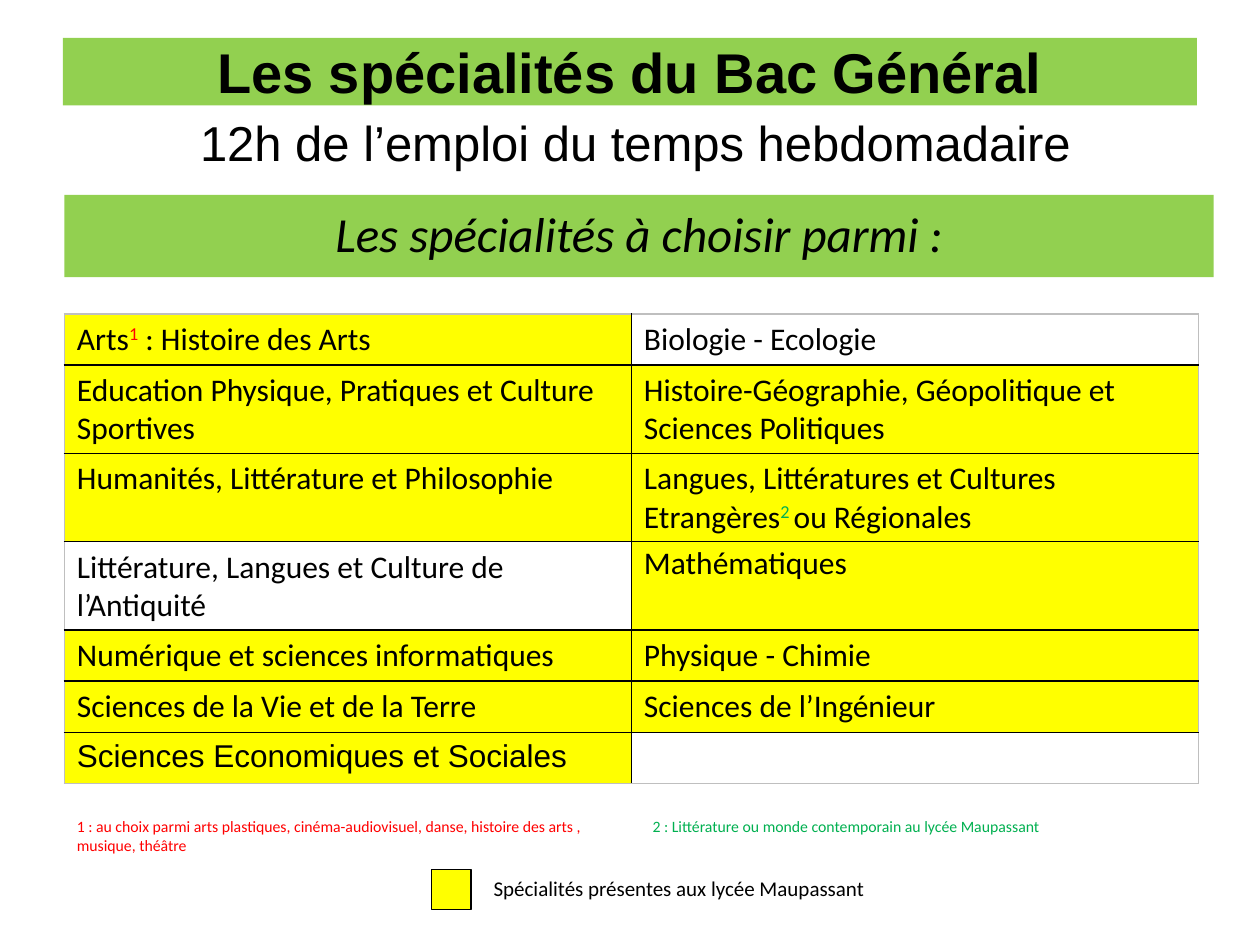
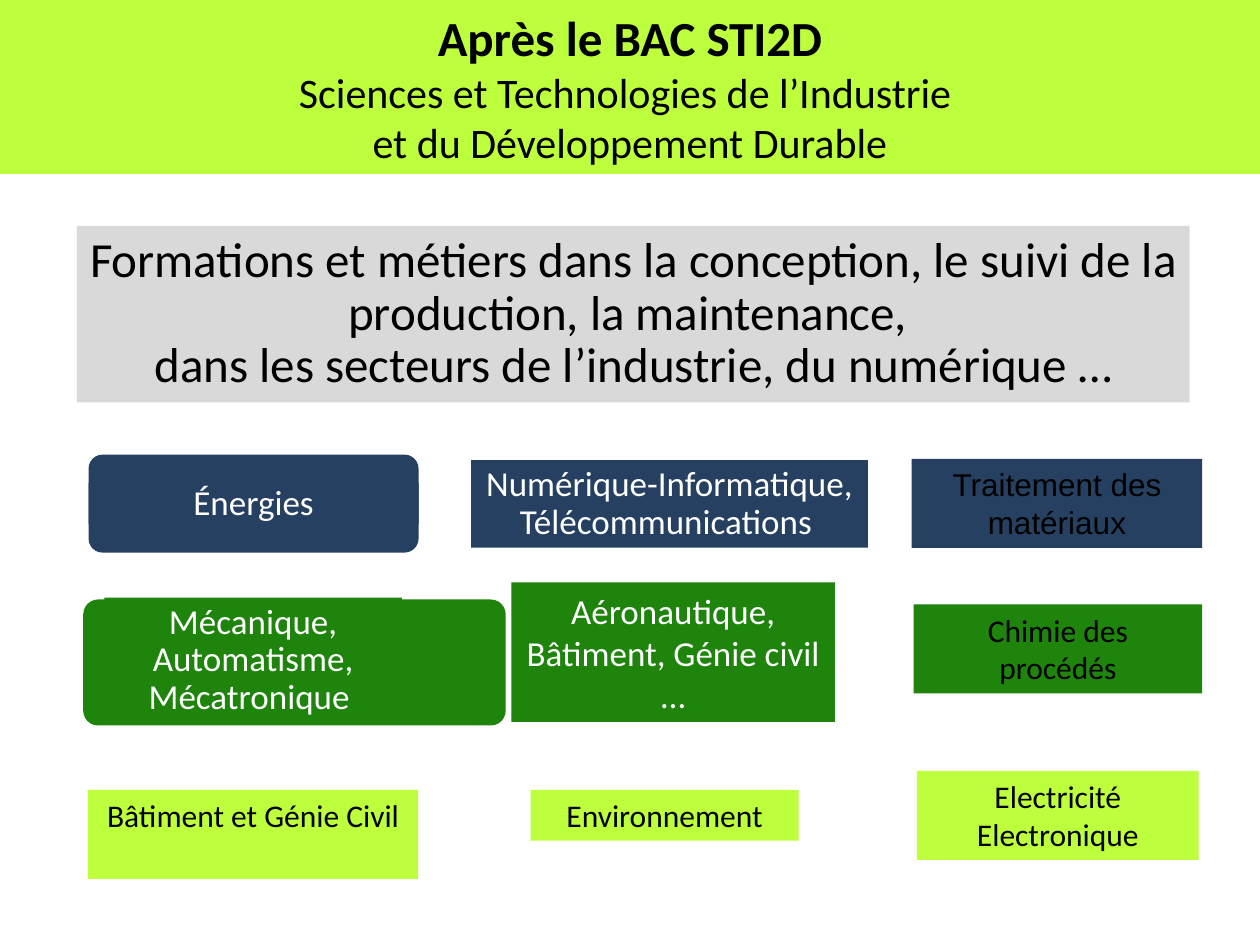
from dataclasses import dataclass

from lxml.etree import SubElement
from pptx import Presentation
from pptx.dml.color import RGBColor
from pptx.enum.shapes import MSO_SHAPE as Preset
from pptx.enum.text import MSO_ANCHOR as Anchor, PP_ALIGN as Align
from pptx.oxml.ns import qn
from pptx.util import Pt


@dataclass(frozen=True)
class Theme:
    sans: str = "Calibri"
    alternate: str = "Arial"
    black: str = "000000"
    white: str = "FFFFFF"
    red: str = "FF0000"
    note_green: str = "00B050"
    band_green: str = "92D050"
    lime: str = "BDFF3D"
    forest: str = "1E840C"
    navy: str = "254061"
    grey: str = "D9D9D9"
    edge_grey: str = "BFBFBF"
    yellow: str = "FFFF00"
    title: float = 32
    heading: float = 28
    subheading: float = 24
    field: float = 20
    body: float = 18
    legend: float = 12
    note: float = 9


T = Theme()


def rgb(code):
    return RGBColor.from_string(code)


# Text
def write_text(frame, paragraphs, *, size=T.body, font=T.sans, color=T.black,
               bold=False, italic=False, align=Align.LEFT, spacing=None,
               anchor=Anchor.TOP, inset=None, wrap=True):
    """Each paragraph is a string or a list of (text, run overrides) pairs."""
    frame.word_wrap = wrap
    frame.vertical_anchor = anchor
    if inset is not None:
        frame.margin_left = frame.margin_right = Pt(inset)
        frame.margin_top = frame.margin_bottom = Pt(inset)
    for index, content in enumerate(paragraphs):
        paragraph = frame.add_paragraph() if index else frame.paragraphs[0]
        paragraph.alignment = align
        if spacing:
            paragraph.line_spacing = spacing
        runs = [(content, {})] if isinstance(content, str) else content
        for text, change in runs:
            run = paragraph.add_run()
            run.text = text
            run.font.name = font
            run.font.size = Pt(change.get("size", size))
            run.font.bold = change.get("bold", bold)
            run.font.italic = italic
            run.font.color.rgb = rgb(change.get("color", color))
            if change.get("raised"):
                run._r.get_or_add_rPr().set("baseline", "30000")


def add_text(slide, box, paragraphs, **text_format):
    label = slide.shapes.add_textbox(*map(Pt, box))
    write_text(label.text_frame, paragraphs, **text_format)


# Filled blocks
def add_block(slide, box, fill, paragraphs=(), *, radius=0, outline=None, **text_format):
    preset = Preset.ROUNDED_RECTANGLE if radius else Preset.RECTANGLE
    block = slide.shapes.add_shape(preset, *map(Pt, box))
    block.shadow.inherit = False
    if radius:
        block.adjustments[0] = radius / min(box[2:])
    block.fill.solid()
    block.fill.fore_color.rgb = rgb(fill)
    if outline:
        block.line.color.rgb = rgb(outline)
        block.line.width = Pt(0.75)
    else:
        block.line.fill.background()
    if paragraphs:
        write_text(block.text_frame, paragraphs, **{"align": Align.CENTER, **text_format})


# Table
def set_borders(cell, colors):
    properties = cell._tc.get_or_add_tcPr()
    for position, (side, color) in enumerate(colors.items()):
        line = properties.makeelement(qn(f"a:{side}"), {"w": str(Pt(1))})
        fill = SubElement(line, qn("a:solidFill"))
        SubElement(fill, qn("a:srgbClr"), val=color)
        properties.insert(position, line)


def add_specialty_table(slide, left, top, column_width, rows):
    """Each row is (height, cells); each cell is (content, offered, format)."""
    heights = [height for height, _ in rows]
    table = slide.shapes.add_table(len(rows), 2, Pt(left), Pt(top),
                                   Pt(2 * column_width), Pt(sum(heights))).table
    table.first_row = table.horz_banding = False
    for column in table.columns:
        column.width = Pt(column_width)
    last = len(rows) - 1
    for r, (height, cells) in enumerate(rows):
        table.rows[r].height = Pt(height)
        for c, (content, offered, text_format) in enumerate(cells):
            cell = table.cell(r, c)
            if offered:
                cell.fill.solid()
                cell.fill.fore_color.rgb = rgb(T.yellow)
            else:
                cell.fill.background()
            if content:
                write_text(cell.text_frame, [content], **text_format)
            outer = {"lnL": c == 0, "lnR": c == 1, "lnT": r == 0, "lnB": r == last}
            set_borders(cell, {side: T.edge_grey if at_edge else T.black
                               for side, at_edge in outer.items()})


# Slides
def build_specialties(slide):
    add_block(slide, (36, 21.6, 648, 38.6), T.band_green, ["Les spécialités du Bac Général"],
              size=T.title, font=T.alternate, bold=True, anchor=Anchor.MIDDLE, inset=0)
    add_text(slide, (54, 60.5, 618, 41), ["12h de l’emploi du temps hebdomadaire"],
             size=T.heading, font=T.alternate, align=Align.CENTER, inset=3.6)
    add_block(slide, (36.8, 111.4, 656.8, 47), T.band_green, ["Les spécialités à choisir parmi :"],
              size=T.heading, italic=True, spacing=0.93, anchor=Anchor.MIDDLE, wrap=False)

    def offered(content, **text_format):
        return content, True, text_format

    def absent(content=""):
        return content, False, {}

    single, double = 29.3, 50.4
    arts = [("Arts", {}), ("1", {"color": T.red, "raised": True}), (" : Histoire des Arts", {})]
    languages = [("Langues, Littératures et Cultures Etrangères", {}),
                 ("2 ", {"color": T.note_green, "raised": True}), ("ou Régionales", {})]
    add_specialty_table(slide, 36.8, 179.4, 324, [
        (single, (offered(arts), absent("Biologie - Ecologie"))),
        (double, (offered("Education Physique, Pratiques et Culture Sportives"),
                  offered("Histoire-Géographie, Géopolitique et Sciences Politiques"))),
        (double, (offered("Humanités, Littérature et Philosophie"), offered(languages))),
        (double, (absent("Littérature, Langues et Culture de l’Antiquité"),
                  offered("Mathématiques", spacing=0.87))),
        (single, (offered("Numérique et sciences informatiques"), offered("Physique - Chimie"))),
        (single, (offered("Sciences de la Vie et de la Terre"),
                  offered("Sciences de l’Ingénieur"))),
        (single, (offered("Sciences Economiques et Sociales", font=T.alternate), absent())),
    ])

    # Footnotes and legend
    add_text(slide, (36.8, 463, 306, 29),
             ["1 : au choix parmi arts plastiques, cinéma-audiovisuel, danse, "
              "histoire des arts , musique, théâtre"], size=T.note, color=T.red)
    add_text(slide, (365.8, 463, 306, 18),
             ["2 : Littérature ou monde contemporain au lycée Maupassant"],
             size=T.note, color=T.note_green)
    add_text(slide, (275, 497, 255, 21.6), ["Spécialités présentes aux lycée Maupassant"],
             size=T.legend)
    add_block(slide, (246.6, 497, 22.6, 22.6), T.yellow, outline=T.black)


def build_sti2d(slide):
    add_block(slide, (0, 0, 720, 99.4), T.lime,
              [[("Après le BAC STI2D", {"size": T.heading, "bold": True})],
               "Sciences et Technologies de l’Industrie ", "et du Développement Durable"],
              size=T.subheading, anchor=Anchor.MIDDLE, inset=3.6)
    add_block(slide, (44, 129, 635.8, 101), T.grey,
              ["Formations et métiers dans la conception, le suivi de la production, "
               "la maintenance, ", "dans les secteurs de l’industrie, du numérique …"],
              size=T.heading, spacing=0.9, anchor=Anchor.MIDDLE, inset=4.3)

    # Rounded panels behind the first column
    add_block(slide, (47.6, 342.6, 241.4, 72), T.forest, radius=8.5)
    add_block(slide, (50.6, 259.8, 188.6, 56), T.navy, radius=8)

    # Fields with white text
    field = dict(size=T.field, color=T.white, anchor=Anchor.MIDDLE, inset=2.9)
    tight = dict(field, spacing=0.9)
    add_block(slide, (59.6, 341.5, 170, 72), T.forest,
              ["Mécanique, Automatisme,", "Mécatronique "], **tight)
    add_block(slide, (50.6, 276, 188.6, 23.6), T.navy, ["Énergies"], **tight)
    add_block(slide, (269.2, 263, 226.8, 50), T.navy,
              [[("Numérique-Informatique, Télécommunications", {}), (" ", {"size": T.body})]],
              **tight)
    add_block(slide, (292.2, 332.8, 185, 79.8), T.forest,
              ["Aéronautique, Bâtiment, Génie civil", "…"], **dict(field, inset=3.6))

    # Fields with black text
    for box, fill, label, font in (
        ((521, 262.2, 166, 50.9), T.navy, "Traitement des matériaux", T.alternate),
        ((522, 345.4, 165, 50.9), T.forest, "Chimie des procédés", T.sans),
        ((50.4, 451.4, 188.6, 50.9), T.lime, "Bâtiment et Génie Civil", T.sans),
        ((303.2, 451.4, 153.2, 29), T.lime, "Environnement", T.sans),
        ((524, 440.5, 161, 50.9), T.lime, "Electricité Electronique", T.sans),
    ):
        add_block(slide, box, fill, [label], font=font)


def main():
    deck = Presentation()
    deck.slide_width, deck.slide_height = Pt(720), Pt(540)
    blank = deck.slide_layouts[6]
    for build in (build_specialties, build_sti2d):
        build(deck.slides.add_slide(blank))
    deck.save("out.pptx")


if __name__ == "__main__":
    main()
